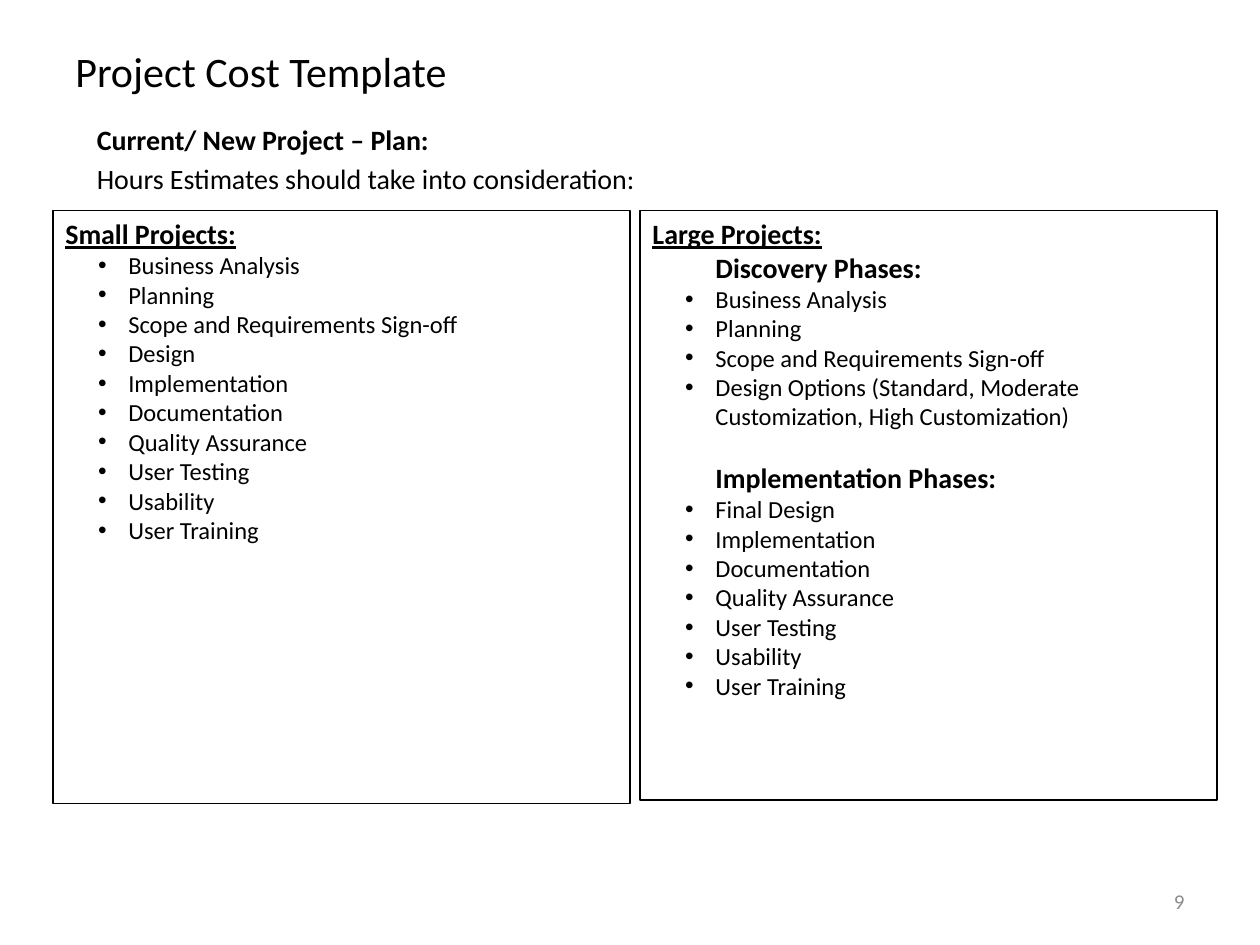
from lxml.etree import SubElement
from pptx import Presentation
from pptx.dml.color import RGBColor
from pptx.enum.shapes import MSO_SHAPE as Shape
from pptx.enum.text import MSO_ANCHOR as Anchor, PP_ALIGN as Align
from pptx.oxml.ns import qn
from pptx.util import Inches, Pt

COLORS = {"ink": "000000", "paper": "FFFFFF", "muted": "8C8C8C"}
FONT = "Calibri"
DELIVERY = ["Implementation", "Documentation", "Quality Assurance",
            "User Testing", "Usability", "User Training"]
SCOPING = ["Business Analysis", "Planning", "Scope and Requirements Sign-off"]
SMALL = [(None, SCOPING + ["Design"] + DELIVERY)]
LARGE = [
    ("Discovery Phases:", SCOPING + [
        "Design Options (Standard, Moderate Customization, High Customization)"]),
    ("Implementation Phases:", ["Final Design"] + DELIVERY),
]


def color(name):
    """Return the named palette colour."""
    return RGBColor.from_string(COLORS[name])


def add_text(frame, text, size=16, bold=False, underline=False, ink="ink",
             align=Align.LEFT, before=0, margin=0, bullet=False):
    """Add one formatted paragraph, filling the first one if it is unused."""
    first = frame.paragraphs[0]
    para = frame.add_paragraph() if first.runs else first
    para.alignment = align
    para.space_before = Pt(before)
    span = para.add_run()
    span.text = text
    span.font.name = FONT
    span.font.size = Pt(size)
    span.font.bold = bold
    span.font.underline = underline
    span.font.color.rgb = color(ink)
    if margin:
        para.level = 1
        props = para._p.get_or_add_pPr()
        props.set("marL", str(Inches(margin)))
        props.set("indent", str(Inches(-0.24) if bullet else 0))
        if bullet:
            SubElement(props, qn("a:buFont"), typeface="Arial")
            SubElement(props, qn("a:buChar"), char="•")


def add_frame(page, box, anchor=Anchor.TOP):
    """Add a wrapping text box and return its text frame."""
    frame = page.shapes.add_textbox(*map(Inches, box)).text_frame
    frame.word_wrap = True
    frame.vertical_anchor = anchor
    return frame


def add_title(page, box):
    """Place the slide title."""
    add_text(add_frame(page, box, Anchor.MIDDLE), "Project Cost Template", size=24)


def add_intro(page, box):
    """Place the two introductory lines."""
    frame = add_frame(page, box)
    add_text(frame, "Current/ New Project – Plan:", bold=True)
    add_text(frame, "Hours Estimates should take into consideration:", before=3.2)


def add_panel(page, box, heading, groups):
    """Place an outlined panel with a heading and its bulleted groups."""
    panel = page.shapes.add_shape(Shape.RECTANGLE, *map(Inches, box))
    panel.shadow.inherit = False
    panel.fill.solid()
    panel.fill.fore_color.rgb = color("paper")
    panel.line.color.rgb = color("ink")
    panel.line.width = Pt(0.75)
    frame = panel.text_frame
    frame.word_wrap = True
    frame.vertical_anchor = Anchor.TOP
    add_text(frame, heading, bold=True, underline=True)
    for index, (phase, items) in enumerate(groups):
        if phase:
            add_text(frame, phase, bold=True, margin=0.5, before=17 * index)
        for item in items:
            add_text(frame, item, size=14, margin=0.5, bullet=True)


def add_page_number(page, box):
    """Place the page number."""
    add_text(add_frame(page, box, Anchor.MIDDLE), "9", size=12, ink="muted",
             align=Align.RIGHT)


def main():
    """Build and save the slide."""
    deck = Presentation()
    deck.slide_width, deck.slide_height = Inches(10), Inches(7.5)
    page = deck.slides.add_slide(deck.slide_layouts[6])
    add_title(page, (0.5, 0.3, 9, 0.53))
    add_intro(page, (0.67, 0.92, 8.83, 0.67))
    add_panel(page, (0.42, 1.67, 4.58, 4.71), "Small Projects:", SMALL)
    add_panel(page, (5.08, 1.67, 4.58, 4.68), "Large Projects:", LARGE)
    add_page_number(page, (7.17, 6.95, 2.33, 0.4))
    deck.save("out.pptx")


if __name__ == "__main__":
    main()
